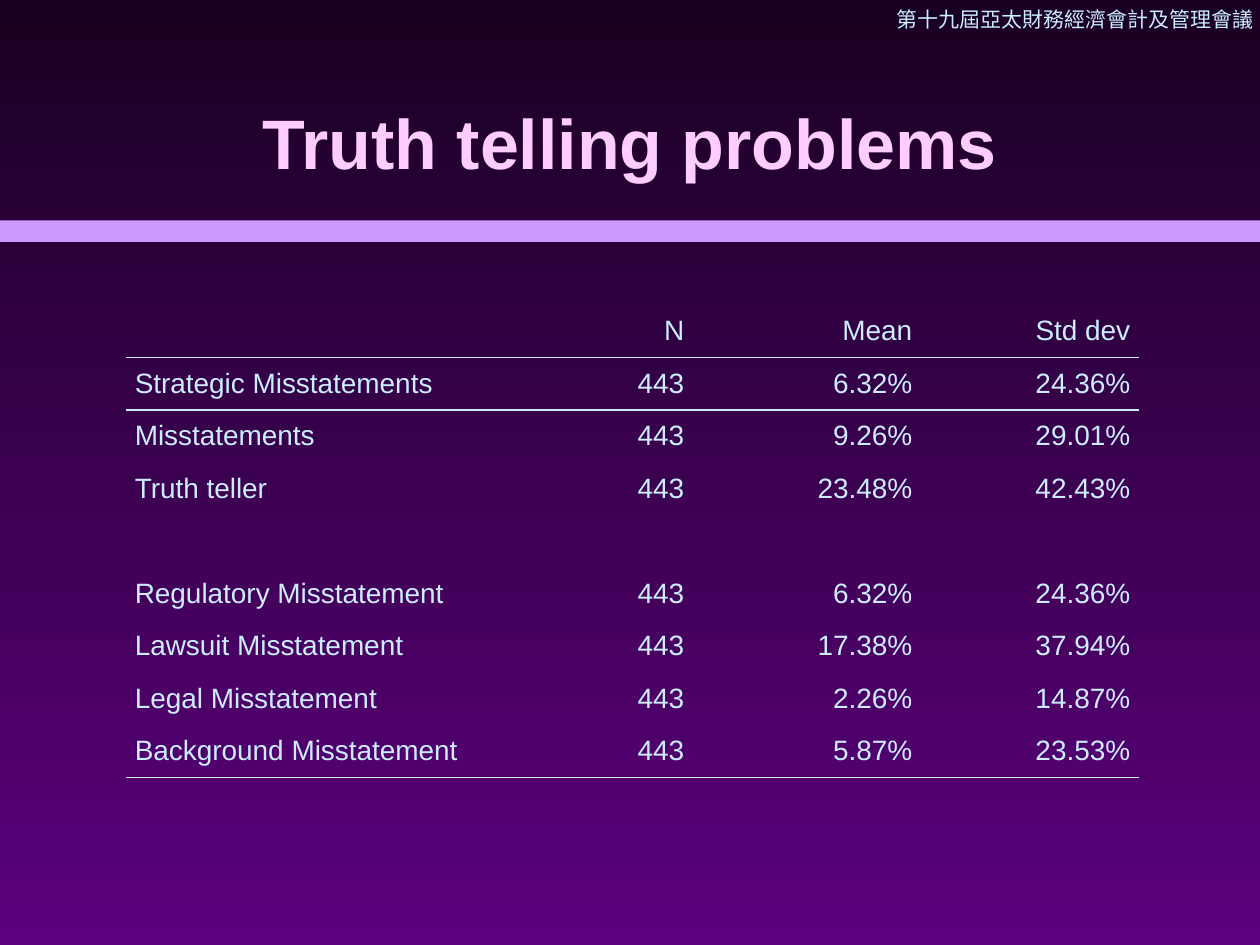
"""Build the slide on truth telling problems."""
from lxml.etree import SubElement
from pptx import Presentation
from pptx.dml.color import RGBColor
from pptx.enum.shapes import MSO_SHAPE
from pptx.enum.text import MSO_ANCHOR, PP_ALIGN
from pptx.oxml.ns import qn
from pptx.util import Inches, Pt

HEX = {"top": "190022", "base": "5D007E", "bar": "CC99FF",
       "title": "FFCCFF", "text": "CCECFF"}
TITLE = "Truth telling problems"
EVENT = "第十九屆亞太財務經濟會計及管理會議"
ROWS = [
    ("", "N", "Mean", "Std dev"),
    ("Strategic Misstatements", "443", "6.32%", "24.36%"),
    ("Misstatements", "443", "9.26%", "29.01%"),
    ("Truth teller", "443", "23.48%", "42.43%"),
    ("", "", "", ""),
    ("Regulatory Misstatement", "443", "6.32%", "24.36%"),
    ("Lawsuit Misstatement", "443", "17.38%", "37.94%"),
    ("Legal Misstatement", "443", "2.26%", "14.87%"),
    ("Background Misstatement", "443", "5.87%", "23.53%"),
]
COLS = (3.37, 1.13, 1.81, 1.73)
RULED = (0, len(ROWS) - 1)
WIDE, HIGH = 10, 7.5
PLAIN = "{2D5ABB26-0587-4C30-8999-92F81FD0307C}"


def paint(name):
    return RGBColor.from_string(HEX[name])


def box(*sides):
    return [Inches(side) for side in sides]


def style(para, size, face, tone, bold=False, align=PP_ALIGN.LEFT):
    para.alignment = align
    for run in para.runs:
        font = run.font
        font.size, font.name, font.bold = Pt(size), face, bold
        font.color.rgb = paint(tone)


def rule(cell, side):
    line = SubElement(cell._tc.get_or_add_tcPr(), qn("a:" + side), w=str(Pt(1)))
    fill = SubElement(line, qn("a:solidFill"))
    SubElement(fill, qn("a:srgbClr"), val=HEX["text"])


def add_frame(slide):
    fill = slide.background.fill
    fill.gradient()
    fill.gradient_angle = 270
    for stop, tone in zip(fill.gradient_stops, ("top", "base")):
        stop.color.rgb = paint(tone)
    bar = slide.shapes.add_shape(MSO_SHAPE.RECTANGLE, *box(0, 1.75, WIDE, 0.17))
    bar.shadow.inherit = False
    bar.fill.solid()
    bar.fill.fore_color.rgb = paint("bar")
    bar.line.fill.background()
    event = slide.shapes.add_textbox(*box(7.02, 0, 5.96, 0.3)).text_frame
    event.word_wrap = True
    event.text = EVENT
    style(event.paragraphs[0], 12, "Times New Roman", "text")


def add_title(slide):
    title = slide.shapes.title
    title.left, title.top, title.width, title.height = box(0.75, 0.5, 8.5, 1.25)
    frame = title.text_frame
    frame.text = TITLE
    frame.vertical_anchor = MSO_ANCHOR.MIDDLE
    style(frame.paragraphs[0], 40, "Arial", "title", True, PP_ALIGN.CENTER)


def add_stats(slide):
    area = box(1, 2.42, sum(COLS), HIGH / 2)
    grid = slide.shapes.add_table(len(ROWS), len(COLS), *area).table
    grid.first_row = grid.horz_banding = False
    grid._tbl.tblPr.find(qn("a:tableStyleId")).text = PLAIN
    for col, width in zip(grid.columns, COLS):
        col.width = Inches(width)
    for i, row in enumerate(ROWS):
        for j, text in enumerate(row):
            cell = grid.cell(i, j)
            cell.text = text
            cell.margin_left = cell.margin_right = Inches(0.07)
            cell.margin_top = cell.margin_bottom = 0
            cell.vertical_anchor = MSO_ANCHOR.MIDDLE
            if i - 1 in RULED:
                rule(cell, "lnT")
            if i in RULED:
                rule(cell, "lnB")
            cell.fill.background()
            align = PP_ALIGN.RIGHT if j else PP_ALIGN.LEFT
            style(cell.text_frame.paragraphs[0], 16, "Arial", "text", align=align)


def main():
    deck = Presentation()
    deck.slide_width, deck.slide_height = box(WIDE, HIGH)
    slide = deck.slides.add_slide(deck.slide_layouts[5])
    add_frame(slide)
    add_title(slide)
    add_stats(slide)
    deck.save("out.pptx")


if __name__ == "__main__":
    main()
